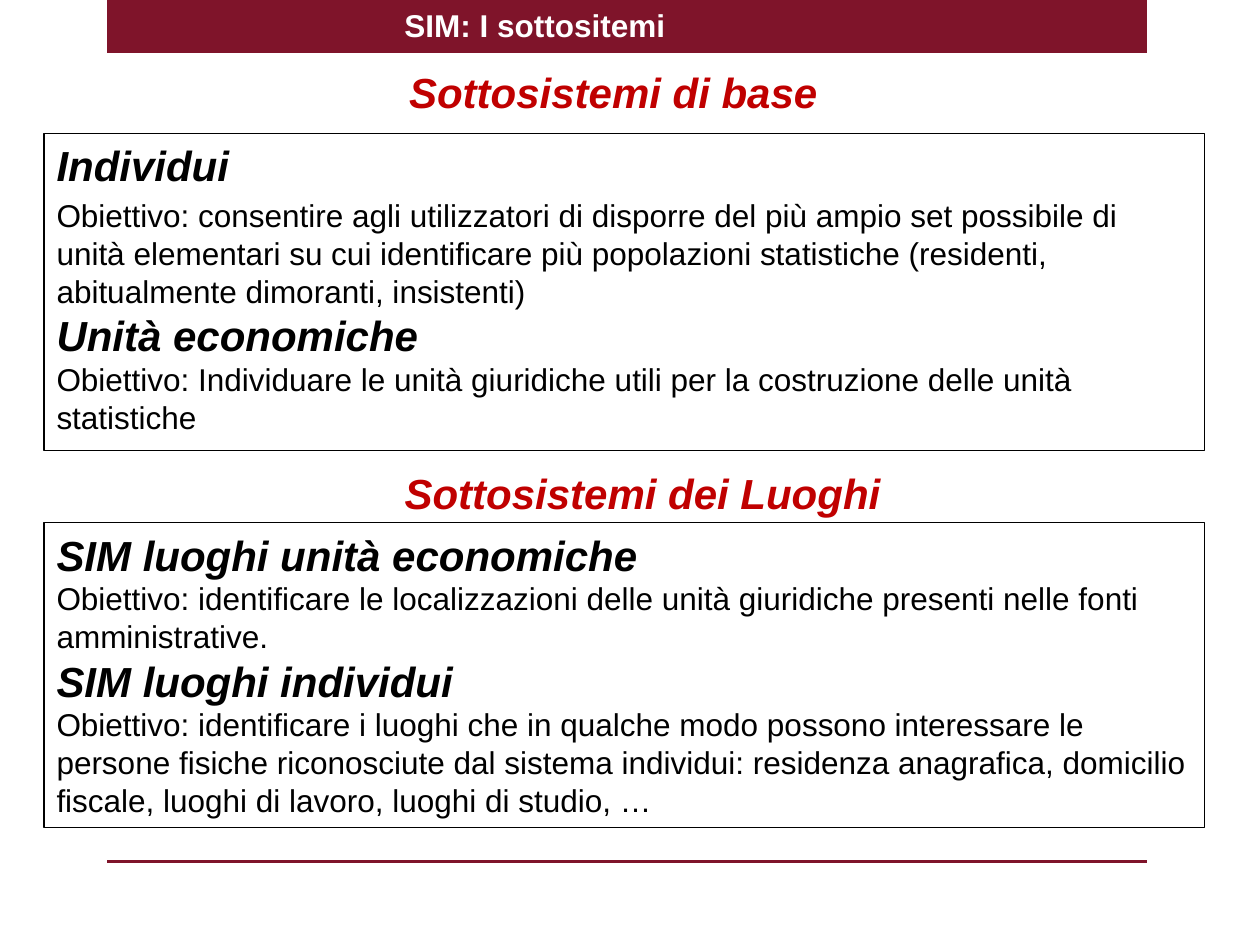
from lxml import etree
from pptx import Presentation
from pptx.dml.color import RGBColor
from pptx.enum.shapes import MSO_CONNECTOR, MSO_SHAPE
from pptx.enum.text import MSO_ANCHOR, MSO_AUTO_SIZE, PP_ALIGN
from pptx.oxml.ns import qn
from pptx.util import Cm, Pt

RECTANGLE = MSO_SHAPE.RECTANGLE
STRAIGHT = MSO_CONNECTOR.STRAIGHT
TOP = MSO_ANCHOR.TOP
GROW = MSO_AUTO_SIZE.SHAPE_TO_FIT_TEXT
LEFT, CENTER = PP_ALIGN.LEFT, PP_ALIGN.CENTER

BURGUNDY = RGBColor(0x7F, 0x14, 0x2A)
RED = RGBColor(0xC0, 0x00, 0x00)
BLACK = RGBColor(0x00, 0x00, 0x00)
WHITE = RGBColor(0xFF, 0xFF, 0xFF)

BASE = [
    ("Individui",
     "Obiettivo: consentire agli utilizzatori di disporre del più ampio set "
     "possibile di unità elementari su cui identificare più popolazioni "
     "statistiche (residenti, abitualmente dimoranti, insistenti)", 3.6),
    ("Unità economiche",
     "Obiettivo: Individuare le unità giuridiche utili per la costruzione "
     "delle unità statistiche", 0),
]
PLACES = [
    ("SIM luoghi unità economiche",
     "Obiettivo: identificare le localizzazioni delle unità giuridiche "
     "presenti nelle fonti amministrative.", 0),
    ("SIM luoghi individui",
     "Obiettivo: identificare i luoghi che in qualche modo possono "
     "interessare le persone fisiche riconosciute dal sistema individui: "
     "residenza anagrafica, domicilio fiscale, luoghi di lavoro, luoghi di "
     "studio, …", 0),
]


def write(paragraph, text, size, color, bold=False, italic=False, align=LEFT, before=0):
    """Fill a paragraph with text in one format."""
    paragraph.text = text
    paragraph.alignment = align
    paragraph.space_before = Pt(before)
    font = paragraph.font
    font.name, font.size = "Arial", Pt(size)
    font.bold, font.italic = bold, italic
    font.color.rgb = color


def prepare(frame, wrap=True):
    """Let a text frame start at the top and grow with its text."""
    frame.word_wrap = wrap
    frame.vertical_anchor = TOP
    frame.auto_size = GROW


def add_banner(slide, left, top, width, height):
    """Draw the coloured bar with the slide title on it."""
    bar = slide.shapes.add_shape(RECTANGLE, left, top, width, height)
    bar.shadow.inherit = False
    bar.fill.solid()
    bar.fill.fore_color.rgb = BURGUNDY
    bar.line.fill.background()
    title = slide.shapes.title
    title.left, title.top = left + Cm(5.74), top
    title.width, title.height = Cm(5.82), Cm(1.02)
    prepare(title.text_frame, wrap=False)
    write(title.text_frame.paragraphs[0], "SIM: I sottositemi", 18, WHITE, bold=True)
    slide.shapes._spTree.append(title._element)


def add_footer_rule(slide, left, top, width):
    """Draw the rule at the foot of the slide."""
    rule = slide.shapes.add_connector(STRAIGHT, left, top, left + width, top)
    rule.line.color.rgb = BURGUNDY
    rule.line.width = Pt(2)
    etree.SubElement(rule._element.spPr, qn("a:effectLst"))


def add_heading(slide, text, left, top, width, height):
    """Add the centred red heading of a group of subsystems."""
    heading = slide.shapes.add_textbox(left, top, width, height)
    prepare(heading.text_frame)
    write(heading.text_frame.paragraphs[0], text, 24, RED, True, True, CENTER)


def add_subsystems(slide, subsystems, left, top, width, height):
    """Add a framed list of subsystems with their goals."""
    panel = slide.shapes.add_shape(RECTANGLE, left, top, width, height)
    panel.shadow.inherit = False
    panel.fill.background()
    panel.line.color.rgb = BLACK
    panel.line.width = Pt(0.75)
    frame = panel.text_frame
    prepare(frame)
    for index, (name, goal, gap) in enumerate(subsystems):
        name_line = frame.add_paragraph() if index else frame.paragraphs[0]
        write(name_line, name, 24, BLACK, True, True)
        write(frame.add_paragraph(), goal, 18, BLACK, before=gap)


def main():
    """Build and save the presentation."""
    deck = Presentation()
    deck.slide_width, deck.slide_height = Cm(25.4), Cm(19.05)
    slide = deck.slides.add_slide(deck.slide_layouts[5])
    add_banner(slide, Cm(2.16), Cm(0), Cm(20.96), Cm(1.07))
    add_footer_rule(slide, Cm(2.16), Cm(17.37), Cm(20.96))
    add_heading(slide, "Sottosistemi di base", Cm(1.9), Cm(1.22), Cm(20.93), Cm(1.3))
    add_subsystems(slide, BASE, Cm(0.89), Cm(2.69), Cm(23.39), Cm(6.4))
    add_heading(slide, "Sottosistemi dei Luoghi", Cm(2.49), Cm(9.3), Cm(20.93), Cm(1.3))
    add_subsystems(slide, PLACES, Cm(0.89), Cm(10.54), Cm(23.39), Cm(6.15))
    deck.save("out.pptx")


if __name__ == "__main__":
    main()
